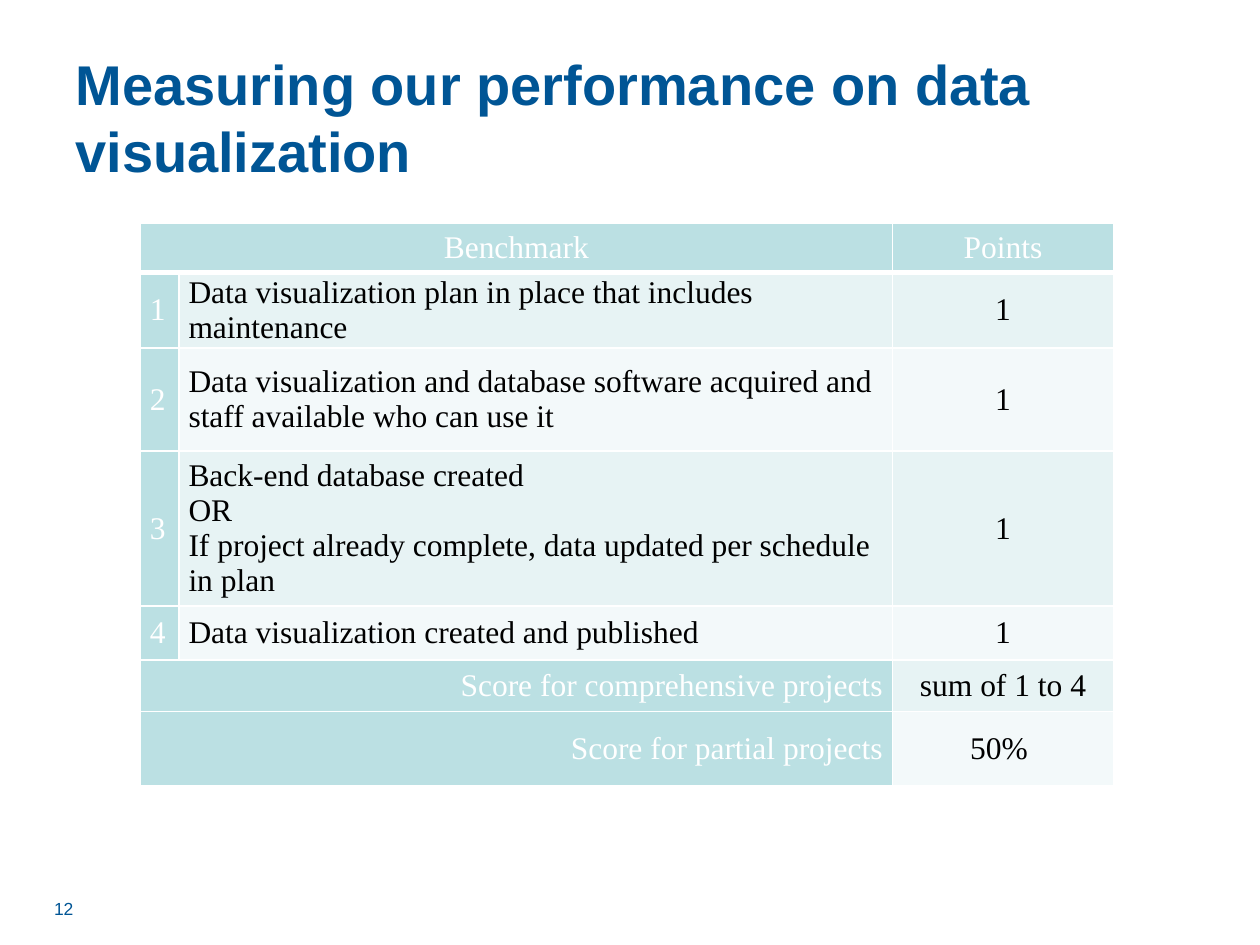
from lxml import etree
from pptx import Presentation
from pptx import util as u
from pptx.dml import color
from pptx.enum import text
from pptx.oxml import ns

ACCENT, TEAL, WHITE, BLACK = "005595", "BBE0E3", "FFFFFF", "000000"
BANDS = ("E7F3F4", "F3F9FA")
LEFT, CENTER, RIGHT = text.PP_ALIGN.LEFT, text.PP_ALIGN.CENTER, text.PP_ALIGN.RIGHT
COLUMN_WIDTHS = (0.78, 14.38, 4.46)
BENCHMARKS = (
    ("Data visualization plan in place that includes maintenance", 1.52),
    ("Data visualization and database software acquired and staff available who can use it", 2.08),
    ("Back-end database created\nOR\nIf project already complete, data updated per schedule in plan", 3.12),
    ("Data visualization created and published", 1.09),
)
SCORES = (
    ("Score for comprehensive projects", "sum of 1 to 4", 1.04),
    ("Score for partial projects", "50% ", 1.5),
)


def rgb(value):
    """Turn a hex string into a colour."""
    return color.RGBColor.from_string(value)


def style(paragraph, face, size, hue, bold=False, align=LEFT):
    """Set the font and alignment of a paragraph."""
    paragraph.alignment = align
    font = paragraph.font
    font.name, font.size, font.bold = face, u.Pt(size), bold
    font.color.rgb = rgb(hue)


def add_label(slide, box, words, size, bold=False, anchor=text.MSO_ANCHOR.TOP):
    """Place a line of accent text in a box."""
    frame = slide.shapes.add_textbox(*map(u.Cm, box)).text_frame
    frame.word_wrap = True
    frame.vertical_anchor = anchor
    frame.text = words
    style(frame.paragraphs[0], "Arial", size, ACCENT, bold)


def draw_borders(cell, bottom=1):
    """Rule the four sides of a cell in white."""
    properties = cell._tc.get_or_add_tcPr()
    for side, points in (("L", 1), ("R", 1), ("T", 1), ("B", bottom)):
        line = etree.SubElement(properties, ns.qn(f"a:ln{side}"), w=str(u.Pt(points)))
        fill = etree.SubElement(line, ns.qn("a:solidFill"))
        etree.SubElement(fill, ns.qn("a:srgbClr"), val=WHITE)


def fill_cell(cell, words, fill, hue, align=LEFT, bottom=1):
    """Write, colour and rule one cell."""
    draw_borders(cell, bottom)
    cell.fill.solid()
    cell.fill.fore_color.rgb = rgb(fill)
    cell.margin_left = cell.margin_right = u.Cm(0.19)
    cell.margin_top = cell.margin_bottom = 0
    cell.vertical_anchor = text.MSO_ANCHOR.MIDDLE
    paragraph = cell.text_frame.paragraphs[0]
    paragraph.text = words
    style(paragraph, "Times New Roman", 18, hue, align=align)


def fill_wide(table, row, words, align, bottom=1):
    """Merge the first two cells of a row and fill them."""
    table.cell(row, 0).merge(table.cell(row, 1))
    draw_borders(table.cell(row, 1), bottom)
    fill_cell(table.cell(row, 0), words, TEAL, WHITE, align, bottom)


def add_scorecard(slide, left, top):
    """Place the benchmark table with its score rows."""
    heights = [0.99, *(row[-1] for row in BENCHMARKS + SCORES)]
    box = (left, top, sum(COLUMN_WIDTHS), sum(heights))
    table = slide.shapes.add_table(len(heights), len(COLUMN_WIDTHS), *map(u.Cm, box)).table
    for column, width in zip(table.columns, COLUMN_WIDTHS):
        column.width = u.Cm(width)
    for row, height in zip(table.rows, heights):
        row.height = u.Cm(height)

    fill_wide(table, 0, "Benchmark", CENTER, bottom=3)
    fill_cell(table.cell(0, 2), "Points", TEAL, WHITE, CENTER, bottom=3)
    for number, (benchmark, _) in enumerate(BENCHMARKS, 1):
        band = BANDS[(number - 1) % 2]
        fill_cell(table.cell(number, 0), str(number), TEAL, WHITE)
        fill_cell(table.cell(number, 1), benchmark, band, BLACK)
        fill_cell(table.cell(number, 2), "1", band, BLACK, CENTER)
    for row, (score, points, _) in enumerate(SCORES, len(BENCHMARKS) + 1):
        fill_wide(table, row, score, RIGHT)
        fill_cell(table.cell(row, 2), points, BANDS[(row - 1) % 2], BLACK, CENTER)


def main():
    """Build and save the slide."""
    deck = Presentation()
    deck.slide_width, deck.slide_height = u.Cm(25.4), u.Cm(19.05)
    slide = deck.slides.add_slide(deck.slide_layouts[6])
    add_label(slide, (1.27, 0.76, 22.86, 3.18), "Measuring our performance on data visualization",
              32, True, text.MSO_ANCHOR.MIDDLE)
    add_scorecard(slide, 2.83, 4.5)
    add_label(slide, (0.84, 17.98, 5.92, 0.69), "12", 10)
    deck.save("out.pptx")


if __name__ == "__main__":
    main()
